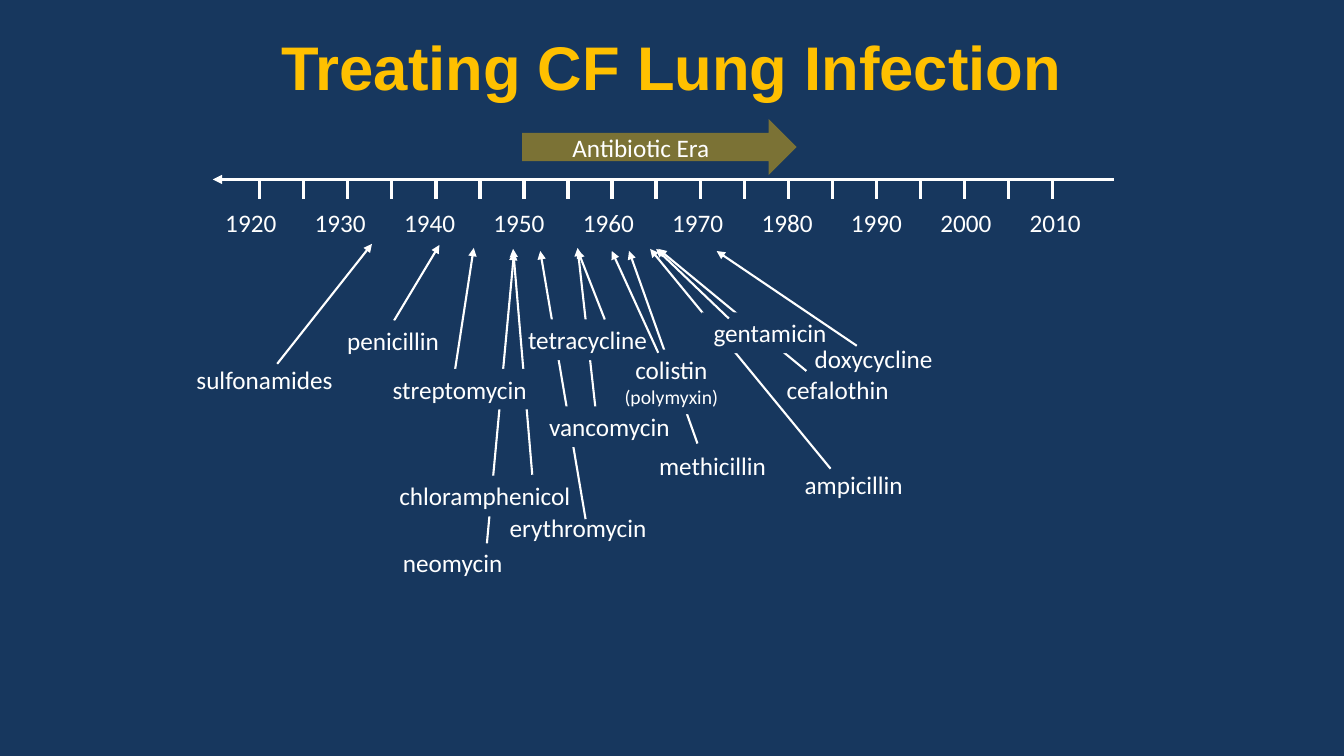
from lxml import etree
from pptx import Presentation
from pptx import util as u
from pptx.dml import color
from pptx.enum import shapes, text
from pptx.oxml import ns

WHITE, NAVY, GOLD = "FFFFFF", "17375E", "FFC000"
LEFT, MID = text.PP_ALIGN.LEFT, text.PP_ALIGN.CENTER

# Arrows are (x1, y1, x2, y2); labels are (words, left, top, width, fill).
DRUGS = [
    (593.3, 334.8, 464.4, 177.8),
    (347.8, 388.1, 367.2, 180),
    ("chloramphenicol", 277.2, 339.8, 138.2, NAVY),
    (418.3, 370.8, 385.9, 179.3),
    (425.5, 293, 412.6, 177.1),
    ("tetracycline", 368.6, 228.2, 102.2, NAVY),
    (498.2, 316.8, 449.3, 179.3),
    (324.7, 266.4, 338.4, 177.1),
    (380.2, 339.1, 366.5, 177.8),
    (281.5, 229, 313.9, 175),
    ("penicillin", 240.5, 229, 80.6, NAVY),
    ("sulfonamides", 132.5, 257, 113, NAVY),
    ("streptomycin", 272.9, 263.5, 110.9, NAVY),
    (198, 259.9, 265.7, 174.2),
    (432, 228.2, 412.6, 178.6),
    ("erythromycin", 353.5, 362.2, 118.8, None),
    ("colistin\n(polymyxin)", 437.8, 249.8, 83.5, NAVY),
    (470.2, 252, 437, 179.3),
    ("methicillin", 461.5, 318.2, 95, NAVY),
    ("neomycin", 275.8, 387.4, 95, None),
    (576, 265, 470.2, 177.8),
    ("ampicillin", 565.9, 331.9, 87.8, None),
    ("gentamicin", 501.1, 223.2, 97.9, NAVY),
    ("cefalothin", 552.2, 263.5, 92.2, None),
    ("doxycycline", 571.8, 241.9, 104.4, None),
    (612, 247, 511.9, 179.3),
    ("vancomycin", 384.5, 290.2, 101.5, NAVY),
    (520.6, 227.5, 468.7, 177.8),
]


def paint(fill, hue):
    """Fill with a solid colour given as a hex string."""
    fill.solid()
    fill.fore_color.rgb = color.RGBColor.from_string(hue)


def write(frame, words, sizes=(18,), font="Calibri", hue=WHITE, bold=False,
          align=MID, wrap=False):
    """Write lines of text, the sizes going line by line."""
    frame.word_wrap = wrap
    frame.text = words
    for para, size in zip(frame.paragraphs, sizes):
        para.alignment = align
        face = para.font
        face.name, face.size, face.bold = font, u.Pt(size), bold
        paint(face.fill, hue)


def label(slide, words, left, top, width, fill=None, **form):
    """Add a text box, opaque if it has a fill."""
    lines = words.count("\n") + 1
    high = 29 if lines == 1 else 46
    box = slide.shapes.add_textbox(u.Pt(left), u.Pt(top), u.Pt(width), u.Pt(high))
    if fill:
        paint(box.fill, fill)
    write(box.text_frame, words, sizes=(18, 14)[:lines], **form)


def line(slide, x1, y1, x2, y2, width=1.5, end=None):
    """Add a white line, with an arrow at headEnd or tailEnd if asked."""
    link = slide.shapes.add_connector(
        shapes.MSO_CONNECTOR.STRAIGHT, u.Pt(x1), u.Pt(y1), u.Pt(x2), u.Pt(y2))
    link.line.width = u.Pt(width)
    paint(link.line.fill, WHITE)
    if end:
        etree.SubElement(link.line._get_or_add_ln(), ns.qn("a:" + end), type="triangle")
    etree.SubElement(link._element.spPr, ns.qn("a:effectLst"))


def title(slide, words):
    """Place and fill the title."""
    head = slide.shapes.title
    head.left, head.top, head.width, head.height = map(u.Pt, (156, 2, 648, 90))
    head.text_frame.vertical_anchor = text.MSO_ANCHOR.MIDDLE
    write(head.text_frame, words, sizes=(44,), font="Arial", hue=GOLD, bold=True, wrap=True)


def axis(slide):
    """Draw the time line with its ticks and decades."""
    y = 128.2
    for i in range(19):
        x = 185.6 + i * 31.45
        line(slide, x, y, x, y + 13.7, width=2.25)
    for i in range(10):
        label(slide, str(1920 + 10 * i), 153.8 + i * 63.85, 144.7, 51, align=LEFT)
    line(slide, 152, y, 795.6, y, width=2.25, end="headEnd")


def era(slide, words):
    """Draw the see-through block arrow and its caption."""
    block = slide.shapes.add_shape(
        shapes.MSO_SHAPE.RIGHT_ARROW, u.Pt(373), u.Pt(85), u.Pt(196), u.Pt(40))
    block.shadow.inherit = False
    block.line.fill.background()
    paint(block.fill, GOLD)
    tint = block._element.spPr.find(".//" + ns.qn("a:srgbClr"))
    etree.SubElement(tint, ns.qn("a:alpha"), val="43000")
    label(slide, words, 401.8, 90.7, 126.7, align=LEFT, wrap=True)


def main():
    """Build and save the slide."""
    deck = Presentation()
    deck.slide_width, deck.slide_height = u.Pt(960), u.Pt(540)
    slide = deck.slides.add_slide(deck.slide_layouts[5])
    paint(slide.background.fill, NAVY)
    title(slide, "Treating CF Lung Infection")
    axis(slide)
    for item in DRUGS:
        if isinstance(item[0], str):
            label(slide, *item)
        else:
            line(slide, *item, end="tailEnd")
    era(slide, "Antibiotic Era")
    deck.save("out.pptx")


if __name__ == "__main__":
    main()
